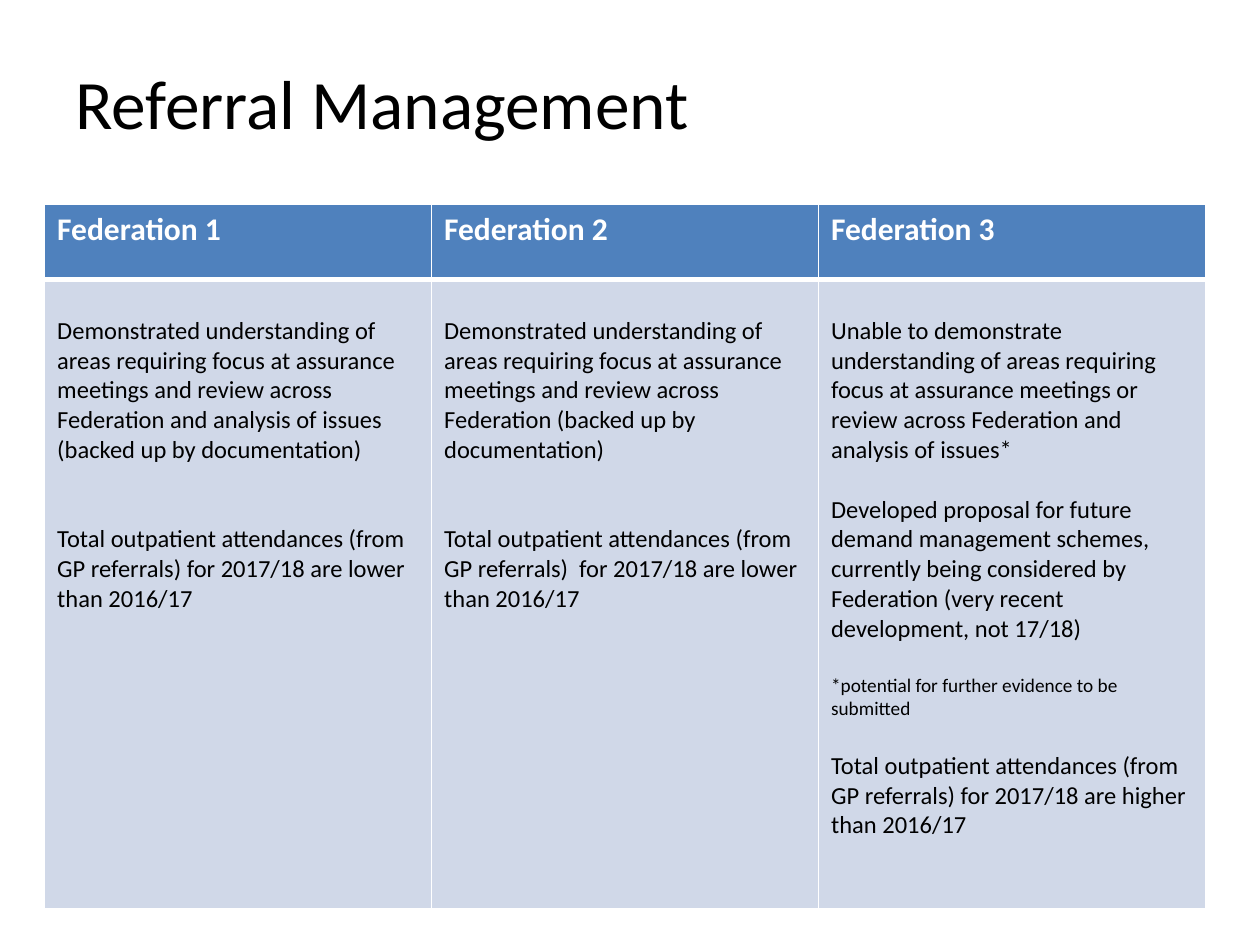
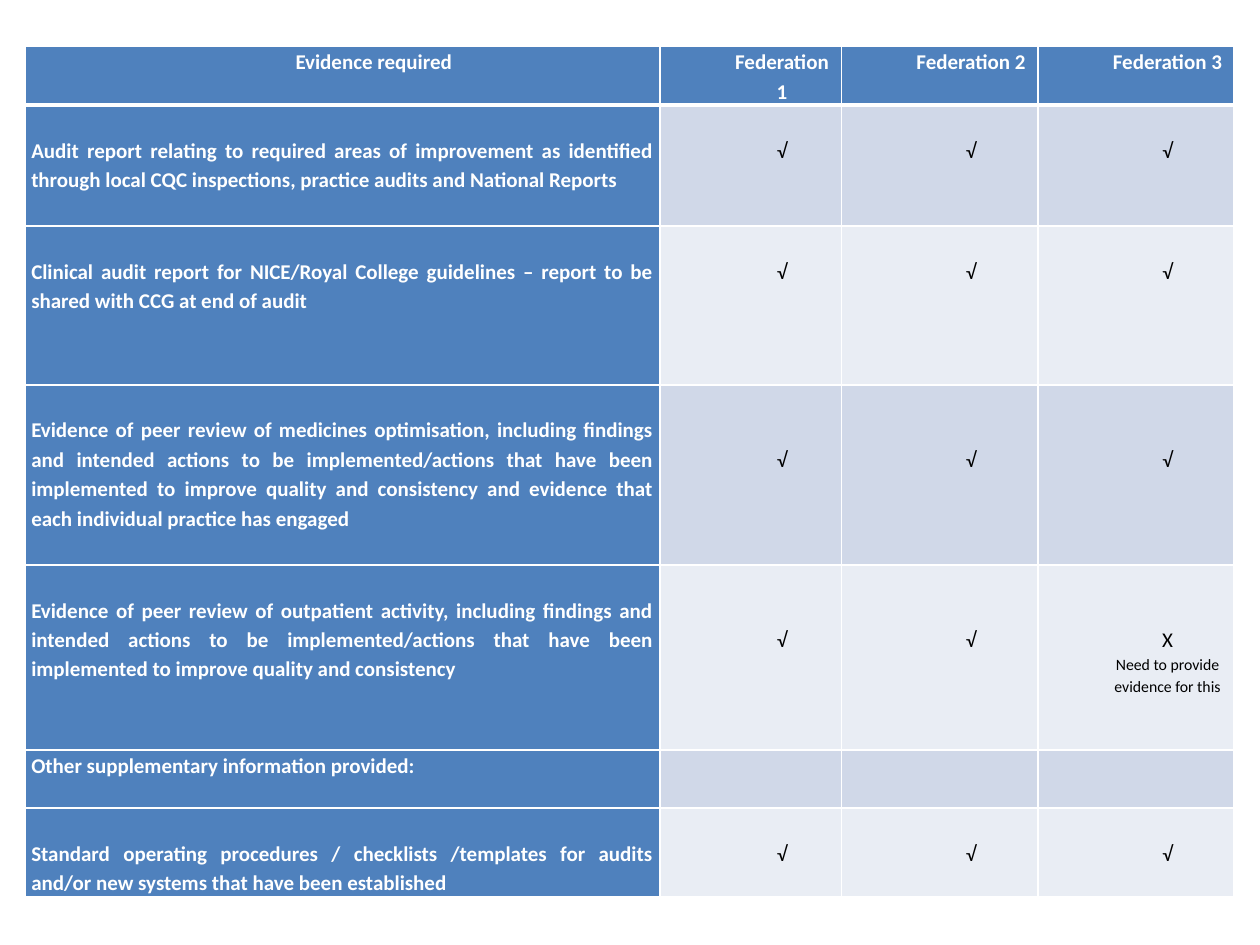
from dataclasses import dataclass

from lxml.etree import SubElement
from pptx import Presentation
from pptx.dml.color import RGBColor
from pptx.enum.text import MSO_ANCHOR, MSO_AUTO_SIZE, PP_ALIGN
from pptx.oxml.ns import qn
from pptx.util import Cm, Pt


@dataclass(frozen=True)
class Theme:
    """Colours, type sizes and line widths shared by the slides."""
    font: str = "Calibri"
    blue: RGBColor = RGBColor(0x4F, 0x81, 0xBD)
    bands: tuple = (RGBColor(0xD0, 0xD8, 0xE8), RGBColor(0xE9, 0xED, 0xF4))
    white: RGBColor = RGBColor(0xFF, 0xFF, 0xFF)
    black: RGBColor = RGBColor(0, 0, 0)
    title: float = 39.6
    heading: int = 18
    body: int = 14
    footnote: int = 11
    evidence: int = 12
    remark: int = 9
    rule: int = 1
    header_rule: int = 3


@dataclass(frozen=True)
class Entry:
    """One paragraph with its size and the space before it, in points."""
    text: str
    size: float
    before: float = 0


@dataclass(frozen=True)
class Layout:
    """How the paragraphs of a cell are set."""
    align: PP_ALIGN = PP_ALIGN.LEFT
    indent: Cm = Cm(0)
    spacing: float = 1.0


THEME = Theme()
FEDERATIONS = ("Federation 1", "Federation 2", "Federation 3")
BODY_LINE = 17
EVIDENCE_LINE = Cm(0.59)
CENTRED = Layout(PP_ALIGN.CENTER, Cm(1.27), 1.15)
JUSTIFIED = Layout(PP_ALIGN.JUSTIFY, Cm(0), 1.15)

OUTPATIENTS = "Total outpatient attendances (from GP referrals) {} 2017/18 are {} than 2016/17"
UNDERSTANDING = ("Demonstrated understanding of areas requiring focus at assurance meetings "
                 "and review across Federation {}(backed up by documentation)")
FINDINGS = (
    (Entry(UNDERSTANDING.format("and analysis of issues "), THEME.body),
     Entry(OUTPATIENTS.format("for", "lower"), THEME.body, 2 * BODY_LINE)),
    (Entry(UNDERSTANDING.format(""), THEME.body),
     Entry(OUTPATIENTS.format(" for", "lower"), THEME.body, 2 * BODY_LINE)),
    (Entry("Unable to demonstrate understanding of areas requiring focus at assurance "
           "meetings or review across Federation and analysis of issues*", THEME.body),
     Entry("Developed proposal for future demand management schemes, currently being "
           "considered by Federation (very recent development, not 17/18)",
           THEME.body, BODY_LINE),
     Entry("*potential for further evidence to be submitted", THEME.footnote, BODY_LINE),
     Entry(OUTPATIENTS.format("for", "higher"), THEME.body, BODY_LINE)),
)

TICK = (Entry("√", THEME.evidence),)
MISSING = (Entry("X", THEME.evidence),
           Entry("Need to provide evidence for this", THEME.remark))
EVIDENCE = (
    ("Audit report relating to required areas of improvement as identified through local "
     "CQC inspections, practice audits and National Reports", 1, (TICK, TICK, TICK), 1),
    ("Clinical audit report for NICE/Royal College guidelines – report to be shared with "
     "CCG at end of audit", 1, (TICK, TICK, TICK), 1),
    ("Evidence of peer review of medicines optimisation, including findings and intended "
     "actions to be implemented/actions that have been implemented to improve quality and "
     "consistency and evidence that each individual practice has engaged",
     1, (TICK, TICK, TICK), 2),
    ("Evidence of peer review of outpatient activity, including findings and intended "
     "actions to be implemented/actions that have been implemented to improve quality and "
     "consistency", 1, (TICK, TICK, MISSING), 2),
    ("Other supplementary information provided:", 0, ((), (), ()), 0),
    ("Standard operating procedures / checklists /templates for audits and/or new systems "
     "that have been established", 1, (TICK, TICK, TICK), 1),
)


def add_span(para, text, size, color, bold=False):
    """Add one formatted run to a paragraph."""
    span = para.add_run()
    span.text = text
    span.font.name = THEME.font
    span.font.size = Pt(size)
    span.font.bold = bold
    span.font.color.rgb = color


def write_cell(cell, entries, layout, color, bold=False):
    """Write the entries as the paragraphs of a cell."""
    for number, entry in enumerate(entries):
        para = cell.text_frame.add_paragraph() if number else cell.text_frame.paragraphs[0]
        para.alignment = layout.align
        para.line_spacing = layout.spacing
        para.space_before = Pt(entry.before)
        para._p.get_or_add_pPr().set("marL", str(layout.indent))
        add_span(para, entry.text, entry.size, color, bold)


def paint_cell(cell, row, fill):
    """Give a cell white borders and a fill, with a heavy rule under the header."""
    properties = cell._tc.get_or_add_tcPr()
    widths = {"a:lnL": THEME.rule, "a:lnR": THEME.rule,
              "a:lnT": THEME.header_rule if row == 1 else THEME.rule,
              "a:lnB": THEME.header_rule if row == 0 else THEME.rule}
    for side, width in widths.items():
        line = SubElement(properties, qn(side), w=str(Pt(width)))
        solid = SubElement(line, qn("a:solidFill"))
        SubElement(solid, qn("a:srgbClr"), val=str(THEME.white))
    cell.fill.solid()
    cell.fill.fore_color.rgb = fill


def add_grid(page, left, top, widths, heights, label_column=False):
    """Add a table with a blue header, banded rows and an optional blue first column."""
    frame = page.shapes.add_table(len(heights), len(widths), left, top,
                                  sum(widths), sum(heights))
    table = frame.table
    for column, width in zip(table.columns, widths):
        column.width = width
    for row, height in enumerate(heights):
        table.rows[row].height = height
        for column in range(len(widths)):
            blue = row == 0 or (label_column and column == 0)
            fill = THEME.blue if blue else THEME.bands[(row - 1) % 2]
            paint_cell(table.cell(row, column), row, fill)
    return table


def add_title(page, text, left, top, width, height):
    """Place and format the title placeholder."""
    box = page.shapes.title
    box.left, box.top, box.width, box.height = left, top, width, height
    frame = box.text_frame
    frame.auto_size = MSO_AUTO_SIZE.NONE
    frame.word_wrap = True
    frame.vertical_anchor = MSO_ANCHOR.MIDDLE
    para = frame.paragraphs[0]
    para.alignment = PP_ALIGN.LEFT
    add_span(para, text, THEME.title, THEME.black)


def add_findings(page, left, top, width):
    """Add the table of findings, one equal column per federation."""
    widths = [width // len(FEDERATIONS)] * len(FEDERATIONS)
    table = add_grid(page, left, top, widths, [Cm(1.52), Cm(12.67)])
    for column, (name, findings) in enumerate(zip(FEDERATIONS, FINDINGS)):
        write_cell(table.cell(0, column), [Entry(name, THEME.heading)],
                   Layout(), THEME.white, True)
        cell = table.cell(1, column)
        cell.margin_top = Cm(0.73)
        write_cell(cell, findings, Layout(), THEME.black)


def add_evidence(page, left, top):
    """Add the checklist of evidence against each federation."""
    widths = [Cm(size) for size in (12.8, 3.66, 3.96, 3.96)]
    heights = [Cm(size) for size in (1.19, 2.44, 3.2, 3.63, 3.73, 1.17, 1.78)]
    table = add_grid(page, left, top, widths, heights, label_column=True)
    for cell in table.iter_cells():
        cell.margin_left = cell.margin_right = Cm(0.13)
        cell.margin_top = cell.margin_bottom = 0
    for column, name in enumerate(("Evidence required",) + FEDERATIONS):
        write_cell(table.cell(0, column), [Entry(name, THEME.evidence)],
                   CENTRED, THEME.white, True)
    for row, (label, label_drop, marks, mark_drop) in enumerate(EVIDENCE, start=1):
        label_cell = table.cell(row, 0)
        label_cell.margin_top = label_drop * EVIDENCE_LINE
        write_cell(label_cell, [Entry(label, THEME.evidence)], JUSTIFIED, THEME.white, True)
        for column, mark in enumerate(marks, start=1):
            cell = table.cell(row, column)
            cell.margin_top = mark_drop * EVIDENCE_LINE
            write_cell(cell, mark, CENTRED, THEME.black)


def main():
    """Build the deck and save it."""
    deck = Presentation()
    deck.slide_width, deck.slide_height = Cm(25.4), Cm(19.05)
    findings_page = deck.slides.add_slide(deck.slide_layouts.get_by_name("Title Only"))
    add_title(findings_page, "Referral Management", Cm(1.27), Cm(0.76), Cm(14.22), Cm(2.57))
    add_findings(findings_page, Cm(0.9), Cm(4.12), Cm(23.4))
    evidence_page = deck.slides.add_slide(deck.slide_layouts.get_by_name("Blank"))
    add_evidence(evidence_page, Cm(0.5), Cm(0.93))
    deck.save("out.pptx")


if __name__ == "__main__":
    main()
